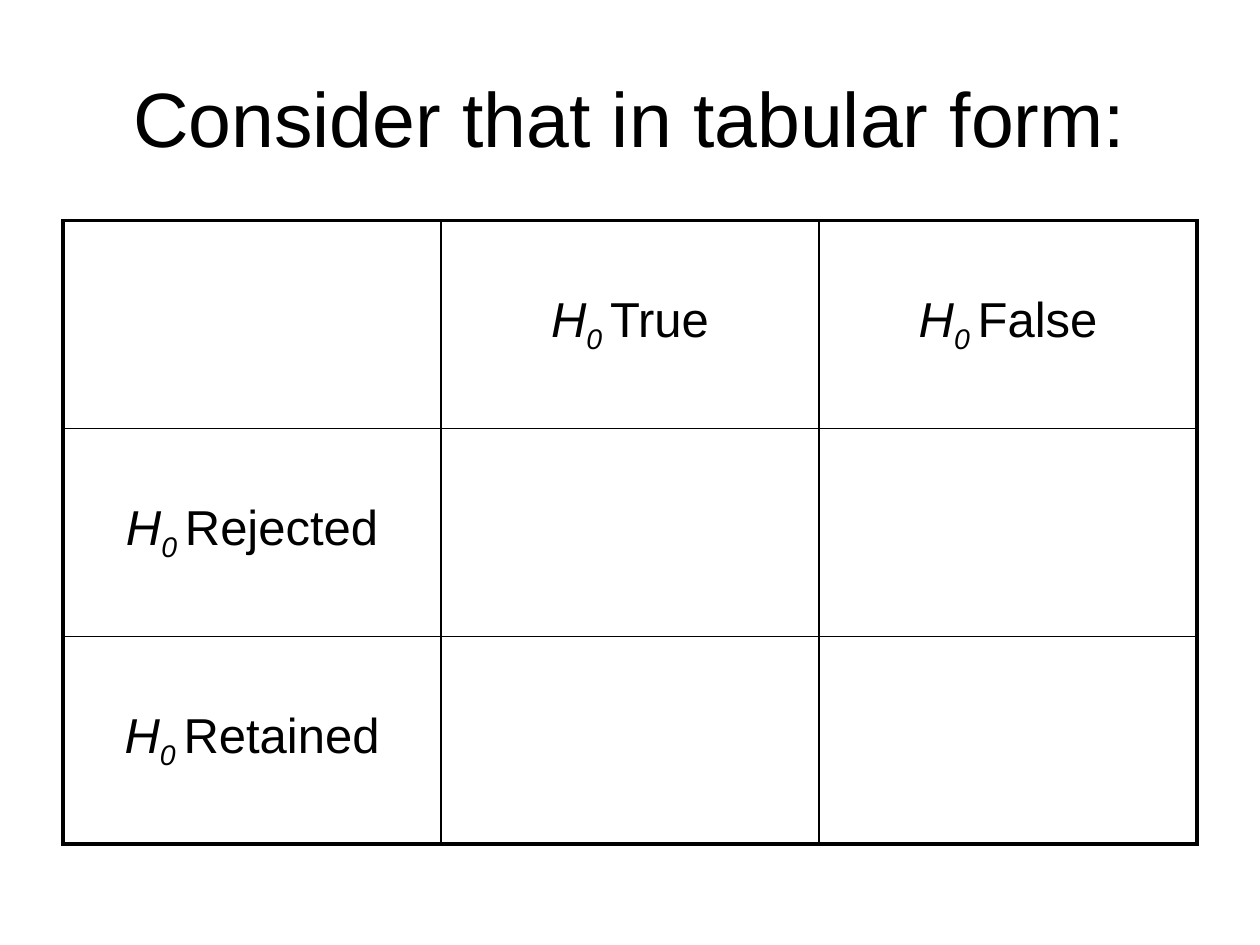
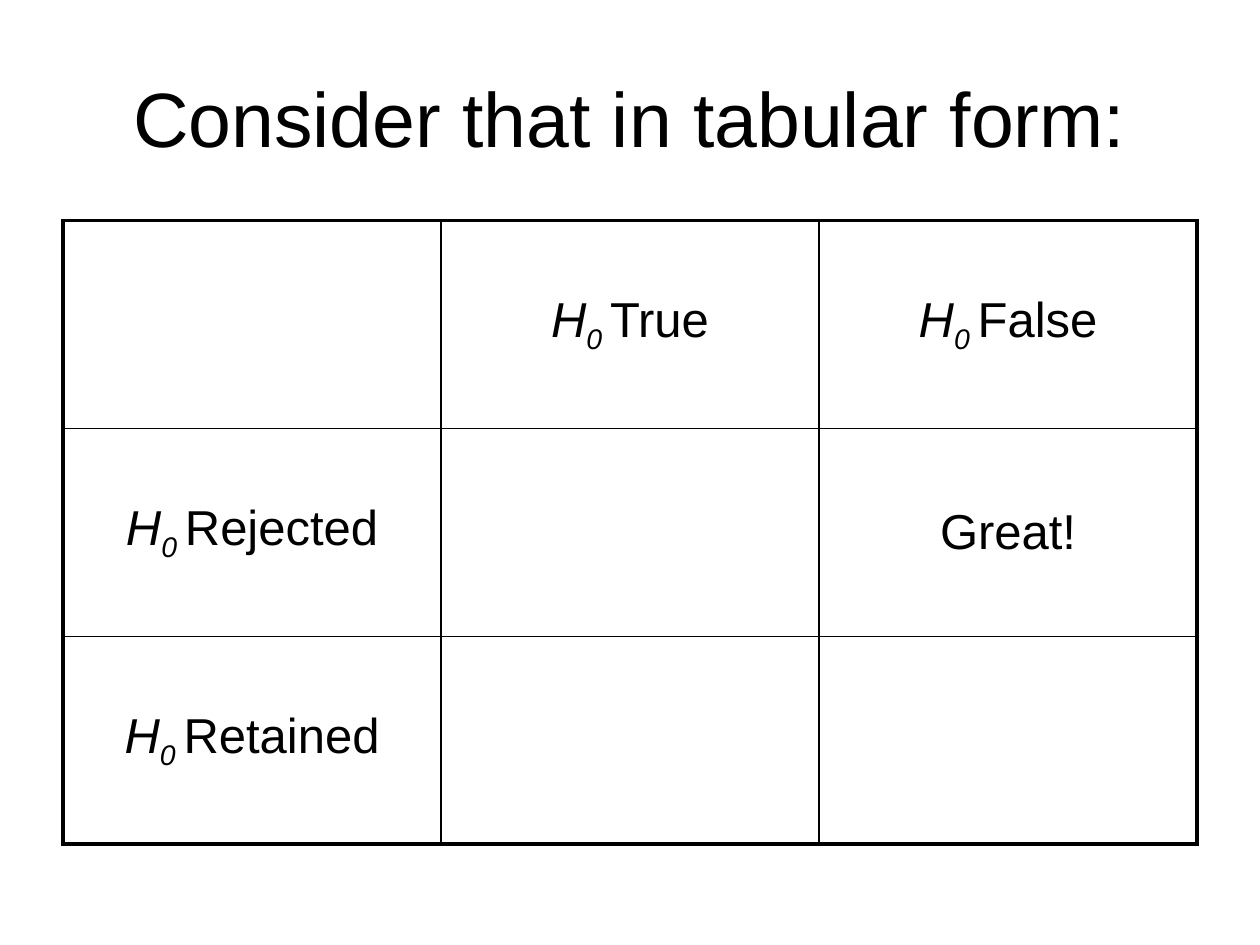
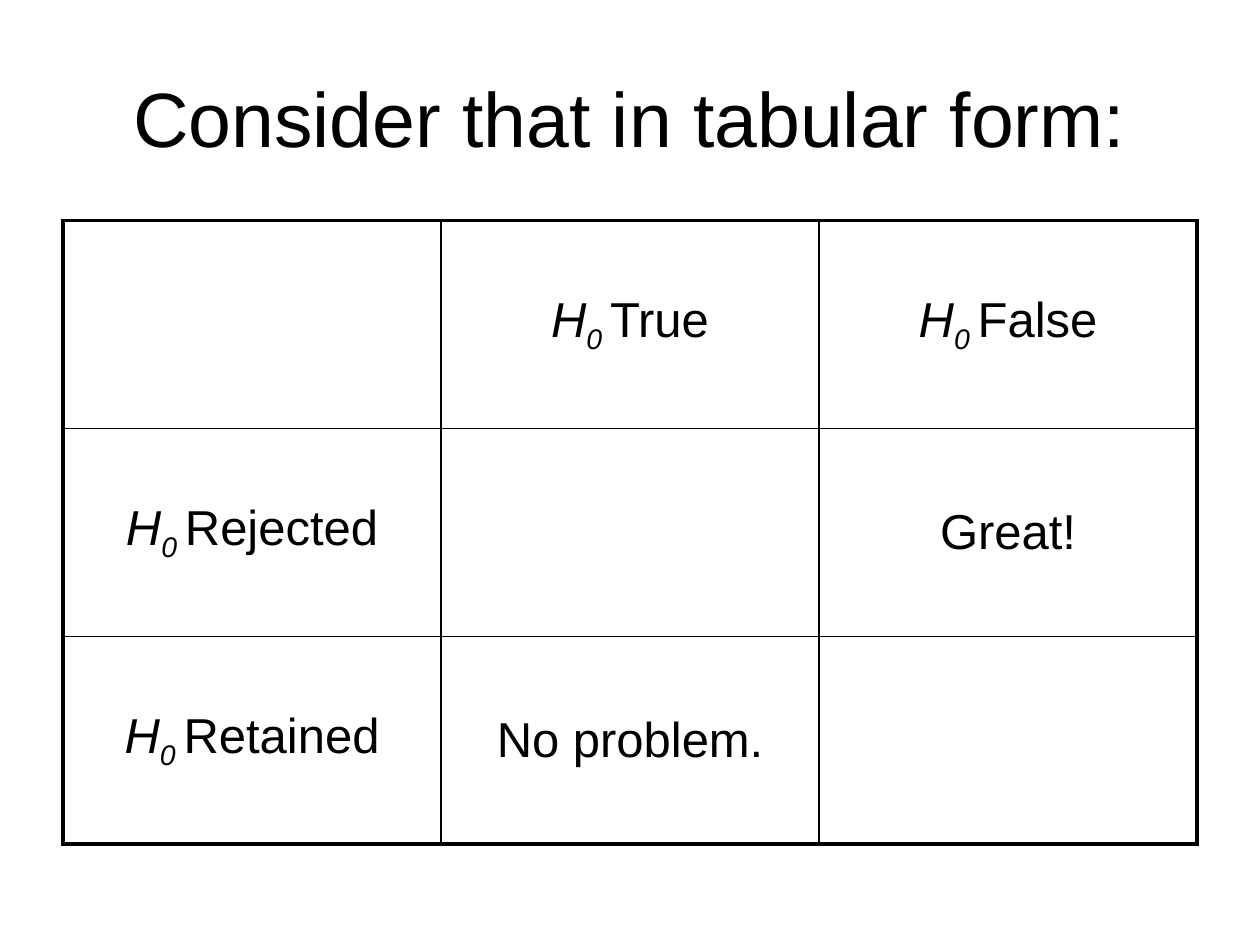
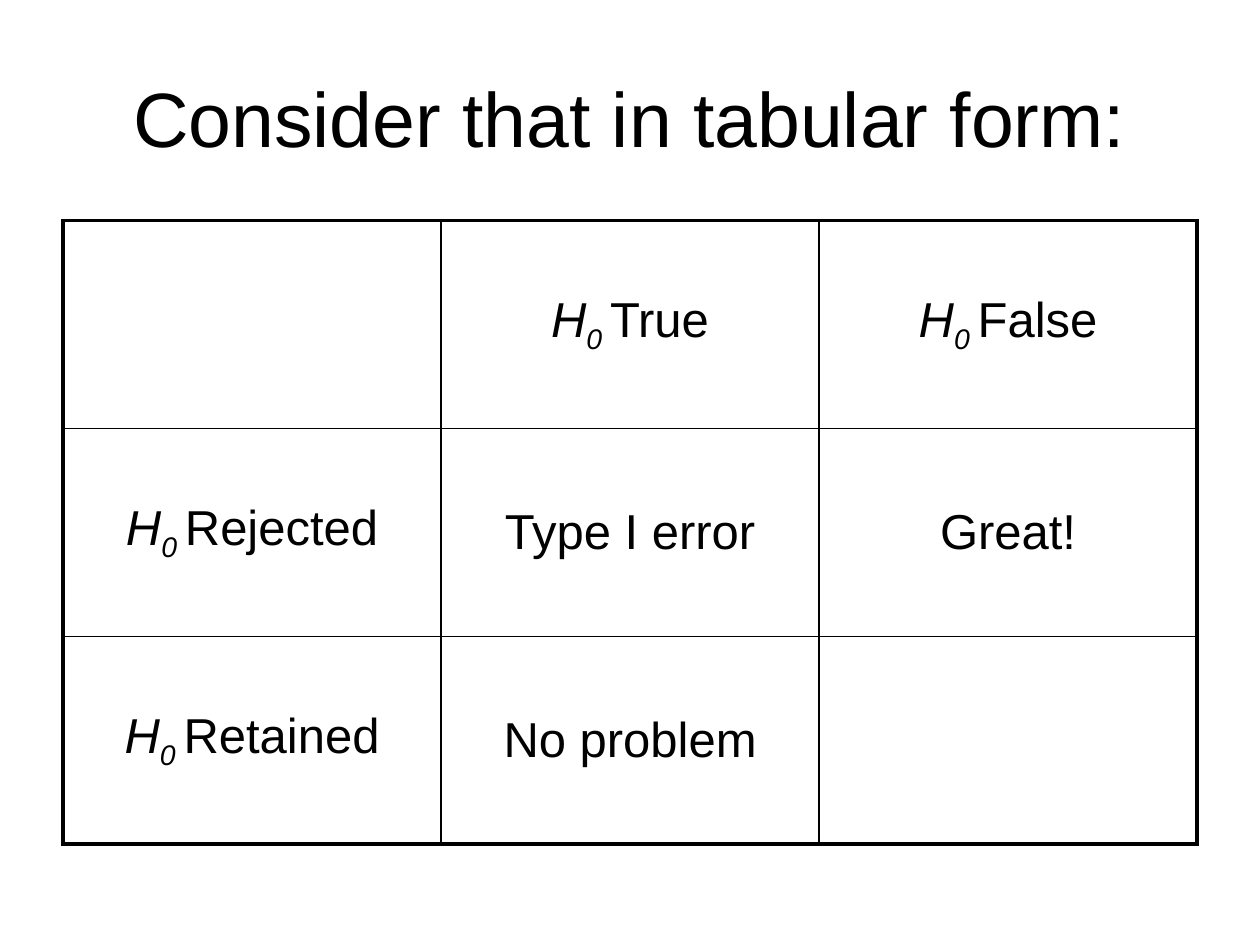
from lxml.etree import SubElement
from pptx import Presentation
from pptx.dml.color import RGBColor
from pptx.enum.text import MSO_ANCHOR, PP_ALIGN
from pptx.oxml.ns import qn
from pptx.util import Inches, Pt

BLACK = RGBColor(0x00, 0x00, 0x00)
WHITE = RGBColor(0xFF, 0xFF, 0xFF)
FONT = "Arial"
TITLE = "Consider that in tabular form:"
TRUE, FALSE = "True", "False"
REJECTED, RETAINED = "Rejected", "Retained"
COLUMNS = [TRUE, FALSE]
ROWS = [REJECTED, RETAINED]
OUTER, INNER = 2.25, 1


def add_run(p, text, size=28, color=BLACK, italic=False, baseline=0):
    r = p.add_run()
    r.text = text
    r.font.name = FONT
    r.font.size = Pt(size)
    r.font.color.rgb = color
    r.font.italic = italic
    if baseline:
        r._r.get_or_add_rPr().set("baseline", str(baseline * 1000))


def add_border(cell, side, width):
    ln = SubElement(cell._tc.get_or_add_tcPr(), qn(f"a:ln{side}"), w=str(Pt(width)))
    fill = SubElement(ln, qn("a:solidFill"))
    SubElement(fill, qn("a:srgbClr"), val=str(BLACK))


class Deck:
    def __init__(self):
        self.prs = Presentation()
        self.prs.slide_width = Inches(10)
        self.prs.slide_height = Inches(7.5)
        self.s = None

    def slide(self):
        self.s = self.prs.slides.add_slide(self.prs.slide_layouts[6])
        self.s.background.fill.solid()
        self.s.background.fill.fore_color.rgb = WHITE

    def title(self, text):
        sp = self.s.shapes.add_textbox(Inches(0.5), Inches(0.3), Inches(9), Inches(1.25))
        tf = sp.text_frame
        tf.word_wrap = True
        tf.vertical_anchor = MSO_ANCHOR.MIDDLE
        p = tf.paragraphs[0]
        p.alignment = PP_ALIGN.CENTER
        add_run(p, text, size=44)

    def cell(self, cell, text="", hypothesis=False):
        cell.vertical_anchor = MSO_ANCHOR.MIDDLE
        cell.fill.background()
        if not text:
            return
        p = cell.text_frame.paragraphs[0]
        p.alignment = PP_ALIGN.CENTER
        p.space_before = Pt(5.6)
        if hypothesis:
            add_run(p, "H", italic=True)
            add_run(p, "0 ", italic=True, baseline=-25)
        add_run(p, text)

    def table(self, outcomes):
        n_rows, n_cols = len(ROWS) + 1, len(COLUMNS) + 1
        frame = self.s.shapes.add_table(
            n_rows, n_cols, Inches(0.5), Inches(1.75), Inches(9), Inches(4.95))
        table = frame.table
        table.first_row = False
        table.horz_banding = False
        for i, row in enumerate([None] + ROWS):
            for j, column in enumerate([None] + COLUMNS):
                cell = table.cell(i, j)
                edges = {"L": j == 0, "R": j == n_cols - 1,
                         "T": i == 0, "B": i == n_rows - 1}
                for side, outer in edges.items():
                    add_border(cell, side, OUTER if outer else INNER)
                if row and column:
                    self.cell(cell, outcomes.get((row, column), ""))
                else:
                    self.cell(cell, row or column or "", hypothesis=True)


def main():
    deck = Deck()
    great = {(REJECTED, FALSE): "Great!"}
    steps = [
        {},
        great,
        {**great, (RETAINED, TRUE): "No problem."},
        {**great, (RETAINED, TRUE): "No problem", (REJECTED, TRUE): "Type I error"},
    ]
    for outcomes in steps:
        deck.slide()
        deck.title(TITLE)
        deck.table(outcomes)
    deck.prs.save("out.pptx")


if __name__ == "__main__":
    main()
